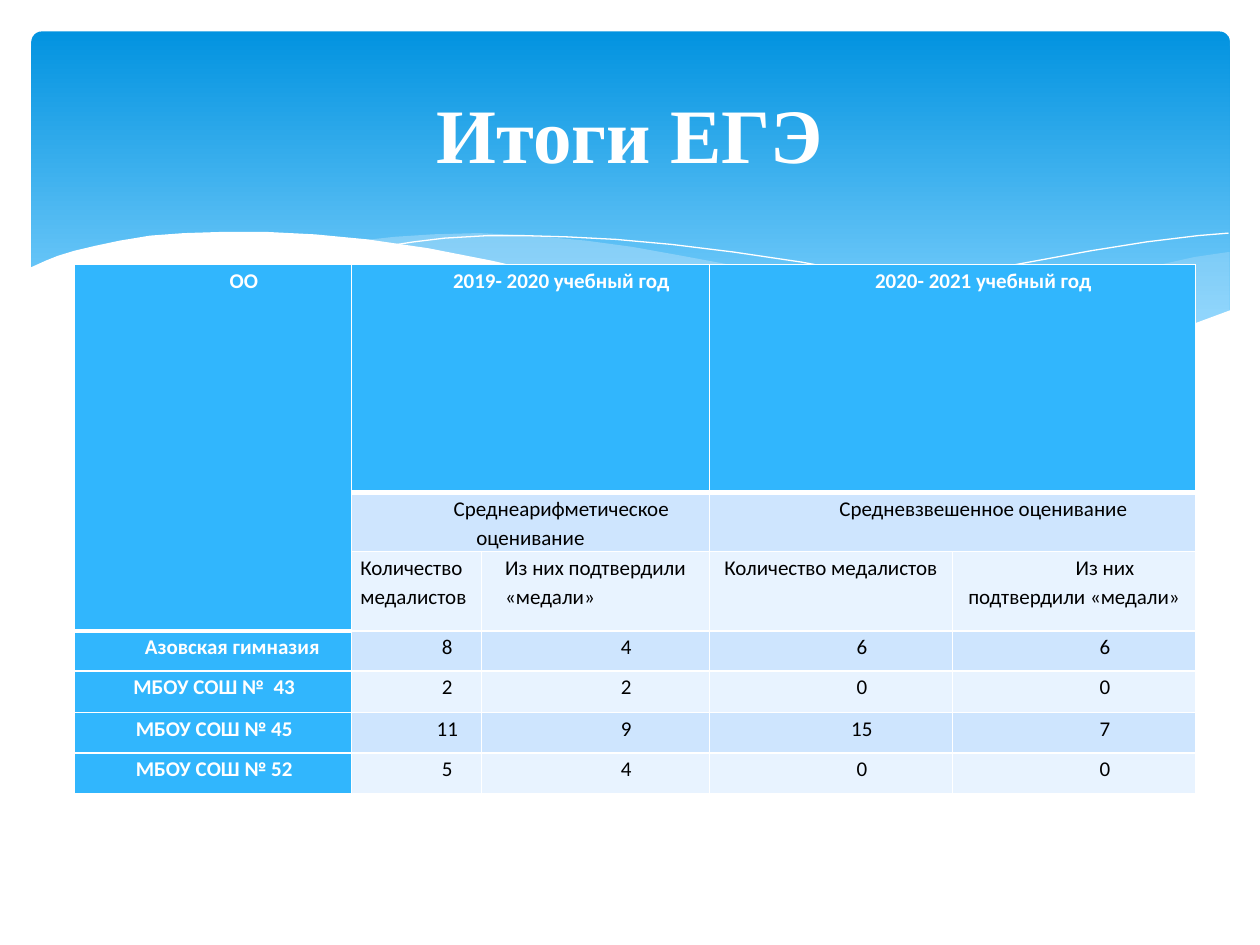
from lxml.etree import SubElement
from pptx import Presentation
from pptx.dml.color import RGBColor
from pptx.enum.shapes import MSO_SHAPE as Preset
from pptx.enum.text import MSO_ANCHOR as Anchor, PP_ALIGN as Align
from pptx.oxml.ns import qn
from pptx.util import Pt

PX = 9144  # EMU per px, 100 px to the inch
COLORS = {
    "white": "FFFFFF", "black": "000000", "sky_top": "0293E0", "sky_bottom": "83D3FE",
    "mist": "C6E7FC", "head": "31B6FD", "odd": "CEE5FE", "even": "E8F3FF",
}

# Wave outlines, relative to the wave box: points, fill, opacity in percent
WAVES = [
    ([(952, 16), (925, 20), (898, 26), (868, 32), (838, 39), (782, 53), (730, 64), (683, 73),
      (638, 81), (668, 85), (696, 88), (722, 91), (746, 93), (769, 93), (791, 94), (812, 93),
      (831, 92), (849, 90), (866, 88), (882, 85), (898, 81), (912, 78), (926, 73), (940, 68),
      (953, 63), (953, 16)], "mist", 29),
    ([(263, 7), (300, 12), (339, 19), (381, 27), (426, 38), (507, 56), (561, 68), (611, 77),
      (657, 84), (699, 90), (738, 93), (773, 94), (805, 94), (834, 93), (870, 89), (843, 85),
      (784, 76), (718, 63), (645, 47), (606, 38), (561, 27), (518, 19), (479, 12), (442, 7),
      (397, 3), (357, 1), (321, 2), (290, 4)], "mist", 40),
    ([(286, 11), (305, 8), (330, 5), (364, 3), (393, 3), (427, 4), (466, 6), (510, 10),
      (559, 16), (613, 24), (672, 35), (737, 49), (808, 67), (884, 88)], None, 100),
    ([(590, 73), (630, 62), (672, 51), (725, 39), (783, 26), (843, 15), (887, 8), (928, 3),
      (952, 1)], None, 100),
    ([(954, 62), (927, 72), (897, 81), (864, 87), (827, 91), (786, 93), (738, 91), (685, 86),
      (625, 78), (556, 66), (480, 49), (424, 36), (368, 23), (317, 13), (269, 6), (227, 2),
      (188, 0), (154, 0), (123, 1), (96, 3), (72, 7), (53, 11), (36, 15), (23, 19), (13, 23),
      (2, 28), (0, 29), (0, 145), (954, 145)], "white", 100),
]

COLUMNS = [220, 103, 181, 193, 193]
ROWS = [181, 32, 63, 32, 33, 32, 32]
RESULTS = [
    ["ОО", "2019- 2020 учебный год", None, "2020- 2021 учебный год", None],
    [None, "Среднеарифметическое оценивание", None, "Средневзвешенное оценивание", None],
    [None, "Количество медалистов", "Из них подтвердили «медали»",
     "Количество медалистов", "Из них подтвердили «медали»"],
    ["Азовская гимназия", "8", "4", "6", "6"],
    ["МБОУ СОШ №  43", "2", "2", "0", "0"],
    ["МБОУ СОШ № 45", "11", "9", "15", "7"],
    ["МБОУ СОШ № 52", "5", "4", "0", "0"],
]
MERGES = [((0, 0), (2, 0))] + [((row, col), (row, col + 1)) for row in (0, 1) for col in (1, 3)]

# Alignment, left margin and first-line indent of a cell
USUAL = (Align.CENTER, 0, 49)
LAYOUTS = {
    (2, 1): (Align.LEFT, 0, 0), (2, 2): (Align.LEFT, 12, 0), (2, 3): (Align.CENTER, 0, 0),
    (3, 0): (Align.JUSTIFY, 0, 49),
    **{(row, 0): (Align.CENTER, 2, 0) for row in (4, 5, 6)},
}


def rgb(name):
    return RGBColor.from_string(COLORS[name])


def emu(box):
    return [value * PX for value in box]


def apply(target, values):
    for name, value in values.items():
        setattr(target, name, value)


def add_band(page, box):
    band = page.shapes.add_shape(Preset.ROUNDED_RECTANGLE, *emu(box))
    band.adjustments[0] = 0.03
    band.shadow.inherit = False
    band.line.fill.background()
    band.fill.gradient()
    band.fill.gradient_angle = 270
    for stop, position, name in zip(band.fill.gradient_stops, (0, 0.9), ("sky_top", "sky_bottom")):
        stop.position = position
        stop.color.rgb = rgb(name)


def add_waves(page, box):
    left, top = emu(box[:2])
    for points, fill, opacity in WAVES:
        builder = page.shapes.build_freeform(*points[0], scale=PX)
        builder.add_line_segments(points[1:], close=fill is not None)
        wave = builder.convert_to_shape(left, top)
        wave.shadow.inherit = False
        if fill is None:  # open hairline
            wave.fill.background()
            wave.line.color.rgb = rgb("white")
            wave.line.width = Pt(0)
            continue
        wave.line.fill.background()
        wave.fill.solid()
        wave.fill.fore_color.rgb = rgb(fill)
        if opacity < 100:
            color = wave._element.spPr.find(qn("a:solidFill")).find(qn("a:srgbClr"))
            SubElement(color, qn("a:alpha")).set("val", str(opacity * 1000))


def set_borders(cell, row, col):
    head_edge = 2 if col == 0 else 0
    heavy = {"lnT": row == head_edge + 1, "lnB": row in (0, head_edge)}
    for side in ("lnL", "lnR", "lnT", "lnB"):
        width = Pt(3 if heavy.get(side) else 1)
        line = SubElement(cell._tc.get_or_add_tcPr(), qn(f"a:{side}"), w=str(width))
        fill = SubElement(line, qn("a:solidFill"))
        SubElement(fill, qn("a:srgbClr"), val=COLORS["white"])


def fill_cell(cell, row, col, text):
    is_head = row == 0 or col == 0
    set_borders(cell, row, col)
    cell.fill.solid()
    cell.fill.fore_color.rgb = rgb("head" if is_head else "odd" if row % 2 else "even")
    apply(cell, {"margin_left": 7 * PX, "margin_right": 7 * PX,
                 "margin_top": 0, "margin_bottom": 0})
    if text is None:
        return
    align, margin, indent = LAYOUTS.get((row, col), USUAL)
    para = cell.text_frame.paragraphs[0]
    apply(para, {"alignment": align, "line_spacing": 1.15})
    props = para._p.get_or_add_pPr()
    props.set("marL", str(margin * PX))
    props.set("indent", str(indent * PX))
    span = para.add_run()
    span.text = text
    apply(span.font, {"name": "Calibri", "size": Pt(12), "bold": is_head})
    span.font.color.rgb = rgb("white" if is_head else "black")


def add_results(page, box):
    table = page.shapes.add_table(len(ROWS), len(COLUMNS), *emu(box)).table
    for column, width in zip(table.columns, COLUMNS):
        column.width = width * PX
    for line, height in zip(table.rows, ROWS):
        line.height = height * PX
    for first, last in MERGES:
        table.cell(*first).merge(table.cell(*last))
    for row, texts in enumerate(RESULTS):
        for col, text in enumerate(texts):
            fill_cell(table.cell(row, col), row, col, text)


def place_title(page, box, text):
    title = page.shapes.title
    apply(title, dict(zip(("left", "top", "width", "height"), emu(box))))
    title.text_frame.vertical_anchor = Anchor.MIDDLE
    para = title.text_frame.paragraphs[0]
    para.alignment = Align.CENTER
    span = para.add_run()
    span.text = text
    apply(span.font, {"name": "Times New Roman", "size": Pt(44), "bold": True})
    span.font.color.rgb = rgb("white")
    page.shapes._spTree.append(title._element)  # bring in front of the band


def main():
    deck = Presentation()
    apply(deck, {"slide_width": 1000 * PX, "slide_height": 750 * PX})
    page = deck.slides.add_slide(deck.slide_layouts[5])
    add_band(page, (25, 25, 951, 270))
    add_waves(page, (23, 184, 954, 145))
    add_results(page, (59, 210, sum(COLUMNS), sum(ROWS)))
    place_title(page, (50, 37, 900, 137), "Итоги ЕГЭ")
    deck.save("out.pptx")


if __name__ == "__main__":
    main()
